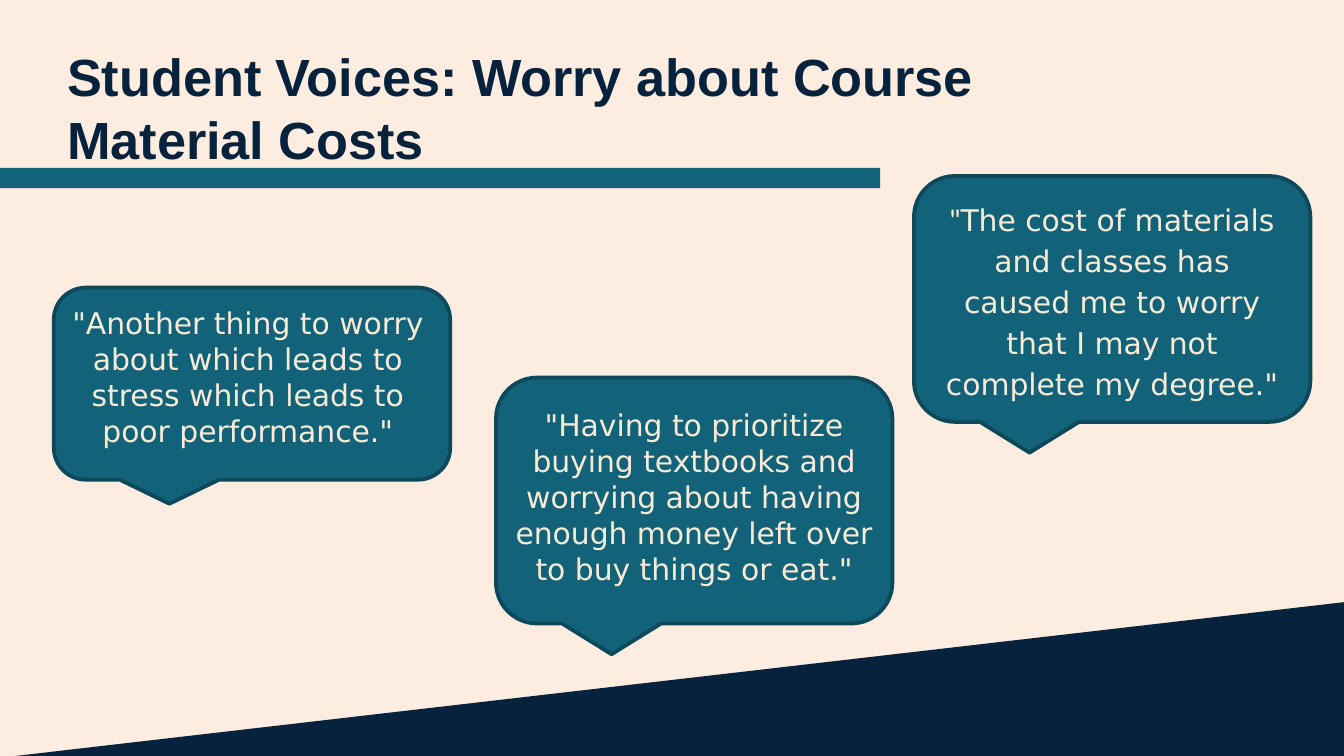
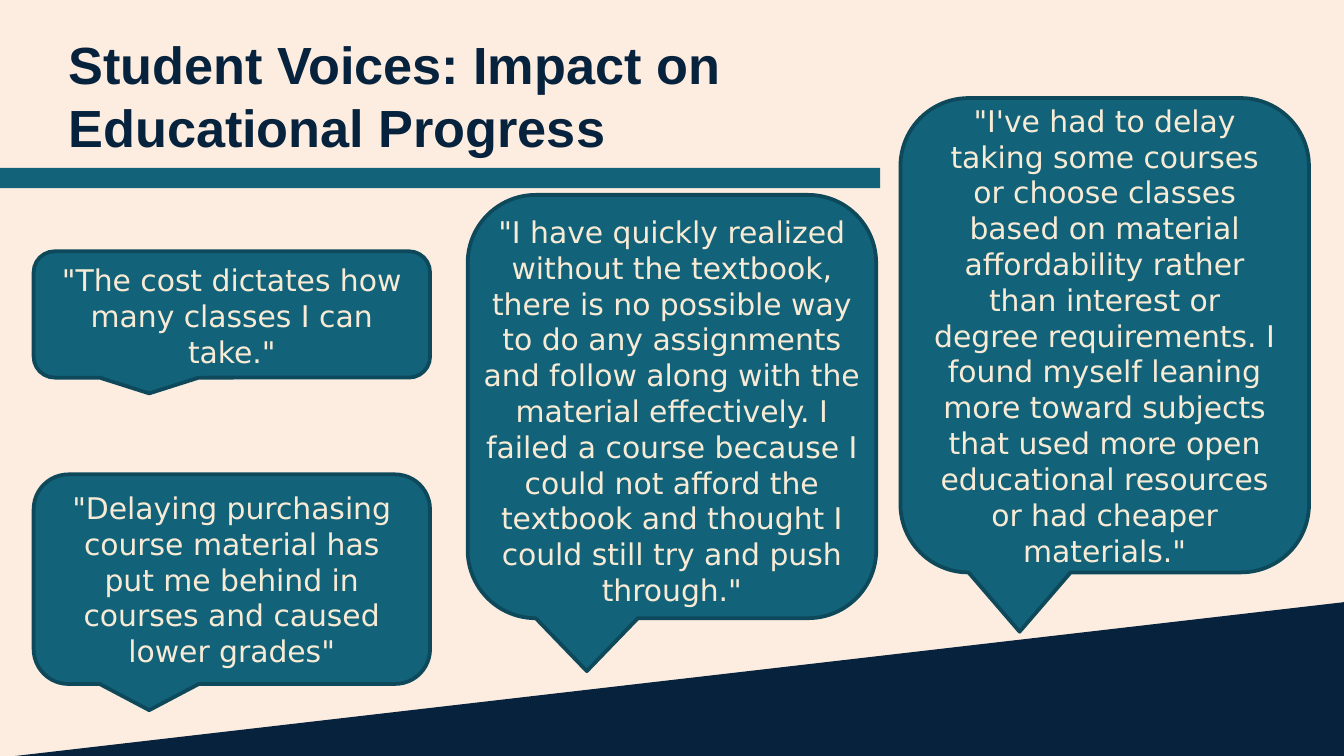
from dataclasses import dataclass
from pptx import Presentation
from pptx.dml.color import RGBColor
from pptx.enum.shapes import MSO_SHAPE
from pptx.enum.text import MSO_ANCHOR, MSO_AUTO_SIZE, PP_ALIGN
from pptx.util import Inches, Pt

TRIANGLE = MSO_SHAPE.RIGHT_TRIANGLE
RECT = MSO_SHAPE.RECTANGLE
CALLOUT = MSO_SHAPE.ROUNDED_RECTANGULAR_CALLOUT
TOP, MIDDLE = MSO_ANCHOR.TOP, MSO_ANCHOR.MIDDLE
LEFT, CENTER = PP_ALIGN.LEFT, PP_ALIGN.CENTER
NO_FIT, GROW = MSO_AUTO_SIZE.NONE, MSO_AUTO_SIZE.SHAPE_TO_FIT_TEXT


@dataclass(frozen=True)
class Theme:
    paper: RGBColor = RGBColor.from_string("FCEDE0")
    navy: RGBColor = RGBColor.from_string("06223D")
    teal: RGBColor = RGBColor.from_string("126279")
    edge: RGBColor = RGBColor.from_string("0D495A")
    cream: RGBColor = RGBColor.from_string("F7EBD6")
    title_font: str = "Arial"
    quote_font: str = "DejaVu Sans"
    mark_font: str = "Lato"
    title_size: Pt = Pt(28)
    quote_size: Pt = Pt(16)
    edge_width: Pt = Pt(2)


T = Theme()
prs = Presentation()
prs.slide_width, prs.slide_height = Inches(10), Inches(5.625)
CELL = prs.slide_width / 100


def add_shape(s, kind, box, fill):
    sp = s.shapes.add_shape(kind, *[round(v * CELL) for v in box])
    sp.shadow.inherit = False
    sp.fill.solid()
    sp.fill.fore_color.rgb = fill
    sp.line.fill.background()
    return sp


def add_run(p, text, font, size, color, bold=False):
    r = p.add_run()
    r.text = text
    r.font.name, r.font.size, r.font.bold = font, size, bold
    r.font.color.rgb = color


WIDE, TALL = 29.5, 30.4
SLIDES = [
    (["Student Voices: Worry about Course Material Costs"], (4, 2.3), [
        ((4, 21.4, WIDE, 14.3), (3.7, 22.2, WIDE, 11.8), 1,
         [('"Another thing to worry about which leads to stress which leads to '
           'poor performance."', T.quote_font)]),
        ((36.9, 28.1, WIDE, 18.3), (36.9, 29.8, WIDE, 14.5), 1,
         [('"Having to prioritize buying textbooks and worrying about having '
           'enough money left over to buy things or eat."', T.quote_font)]),
        ((68, 13.1, WIDE, 18.3), None, 1.15,
         [('"', T.mark_font),
          ('The cost of materials and classes has caused me to worry that I '
           'may not complete my degree."', T.quote_font)]),
    ]),
    (["Student Voices: Impact on", "Educational Progress"], (4.1, 1.4), [
        ((2.5, 18.7, WIDE, 9.4), (2.5, 19, WIDE, 9.1), 1,
         [('"The cost dictates how many classes I can take."', T.quote_font)]),
        ((34.8, 14.5, TALL, 31.5), (34.8, 15.4, TALL, 30.6), 1,
         [('"I have quickly realized without the textbook, there is no possible '
           'way to do any assignments and follow along with the material '
           'effectively. I failed a course because I could not afford the '
           'textbook and thought I could still try and push through."',
           T.quote_font)]),
        ((67, 7.3, TALL, 35.3), None, 1,
         [('"I\'ve had to delay taking some courses or choose classes based on '
           'material affordability rather than interest or degree requirements. '
           'I found myself leaning more toward subjects that used more open '
           'educational resources or had cheaper materials."', T.quote_font)]),
        ((2.5, 35.3, WIDE, 15.6), None, 1,
         [('"Delaying purchasing course material has put me behind in courses '
           'and caused lower grades"', T.quote_font)]),
    ]),
]

fill = prs.slide_master.background.fill
fill.solid()
fill.fore_color.rgb = T.paper
layout = prs.slide_layouts[5]
slides = [prs.slides.add_slide(layout) for _ in SLIDES]

wedge = add_shape(slides[0], TRIANGLE, (-3.6, 44.7, 104.5, 12.1), T.navy)
wedge._element.spPr.xfrm.set("flipH", "1")
band = add_shape(slides[0], RECT, (-0.2, 12.5, 65.7, 1.5), T.teal)
for sp in (band, wedge):
    layout.shapes._spTree.insert(2, sp._element)

for s, (title, (left, top), quotes) in zip(slides, SLIDES):
    sp = s.shapes.title
    sp.left, sp.top, sp.width, sp.height = [
        round(v * CELL) for v in (left, top, 84.1, 5.9)]
    tf = sp.text_frame
    tf.word_wrap, tf.auto_size, tf.vertical_anchor = True, NO_FIT, TOP
    tf.margin_left = tf.margin_right = Inches(0.1)
    tf.margin_top = tf.margin_bottom = Inches(0.1)
    p = tf.paragraphs[0]
    p.alignment = LEFT
    for i, line in enumerate(title):
        if i:
            p.add_line_break()
        add_run(p, line, T.title_font, T.title_size, T.navy, True)

    for callout, text_box, spacing, runs in quotes:
        sp = add_shape(s, CALLOUT, callout, T.teal)
        sp.line.color.rgb, sp.line.width = T.edge, T.edge_width
        tf = sp.text_frame
        tf.vertical_anchor = MIDDLE
        if text_box:
            sp = s.shapes.add_textbox(*[round(v * CELL) for v in text_box])
            tf = sp.text_frame
            tf.auto_size = GROW
        tf.word_wrap = True
        p = tf.paragraphs[0]
        p.alignment, p.line_spacing = CENTER, spacing
        for text, font in runs:
            add_run(p, text, font, T.quote_size, T.cream)

prs.save("out.pptx")
